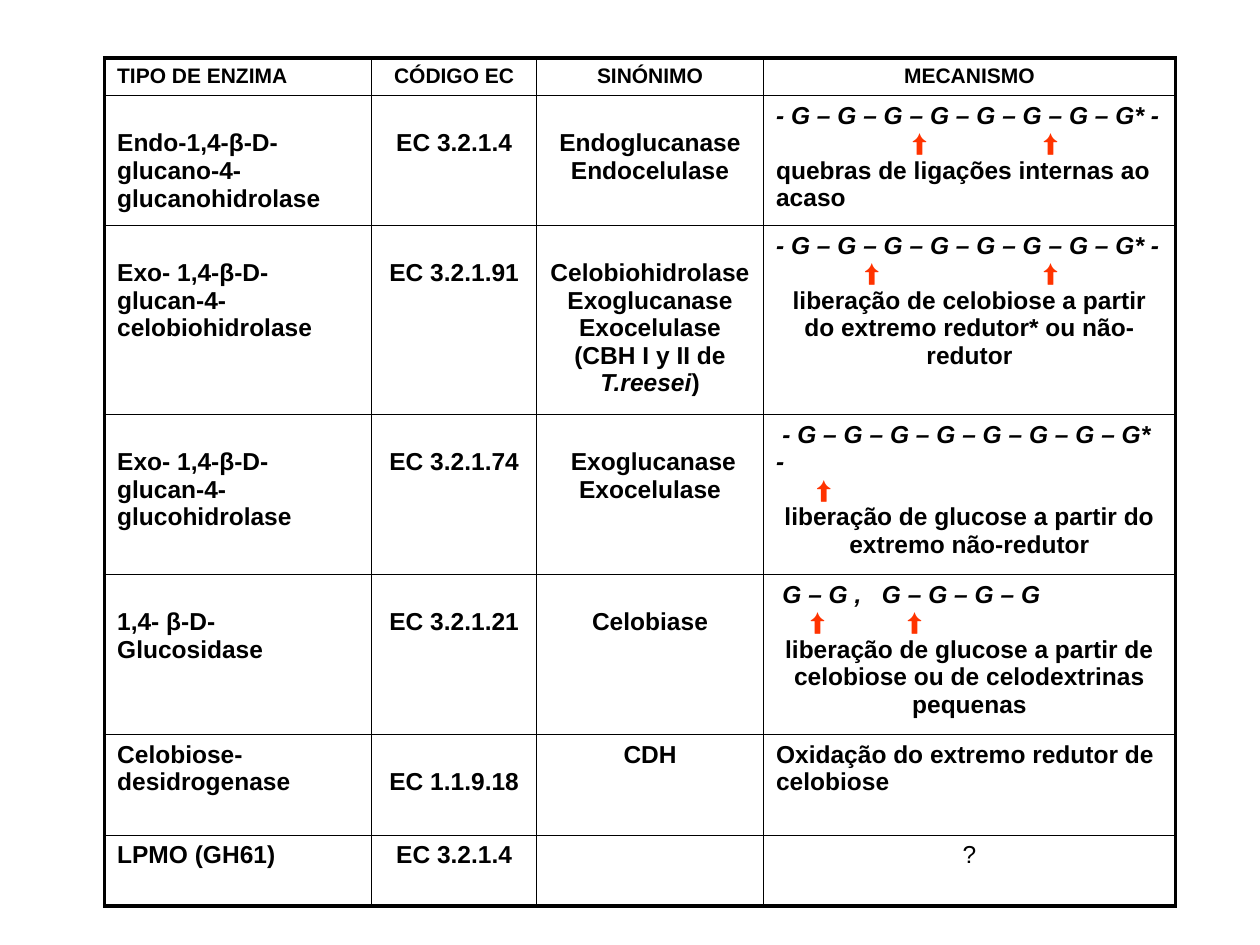
"""Build a slide with a table of cellulolytic enzymes and their mechanisms."""
from lxml import etree
from pptx import Presentation
from pptx.dml.color import RGBColor
from pptx.enum import text as txt
from pptx.oxml import ns
from pptx.util import Inches, Pt

BLACK = RGBColor(0x00, 0x00, 0x00)
ORANGE = RGBColor(0xFF, 0x33, 0x00)
LEFT, CENTER = txt.PP_ALIGN.LEFT, txt.PP_ALIGN.CENTER
MARGIN, LINE = 0.05, 0.22
CHAIN = "- G – G – G – G – G – G – G – G* -"

COLUMNS = [2.12, 1.31, 1.8, 3.27]
HEIGHTS = [0.3, 1.03, 1.5, 1.27, 1.27, 0.8, 0.56]
HEADERS = ["TIPO DE ENZIMA", "CÓDIGO EC", "SINÓNIMO", "MECANISMO"]
ENZYMES = [
    ("Endo-1,4-β-D-glucano-4-glucanohidrolase", "EC 3.2.1.4",
     ["Endoglucanase", "Endocelulase"]),
    ("Exo- 1,4-β-D-glucan-4-celobiohidrolase", "EC 3.2.1.91",
     ["Celobiohidrolase", "Exoglucanase", "Exocelulase", "(CBH I y II de |T.reesei|)"]),
    ("Exo- 1,4-β-D-glucan-4-glucohidrolase", "EC 3.2.1.74",
     [" Exoglucanase", "Exocelulase"]),
    ("1,4- β-D-Glucosidase", "EC 3.2.1.21", ["Celobiase"]),
    ("Celobiose-desidrogenase", "EC 1.1.9.18", ["CDH"]),
    ("LPMO (GH61)", "EC 3.2.1.4", []),
]
MECHANISMS = [
    (CHAIN, [], [1.08, 2.12], "quebras de ligações internas ao acaso", LEFT),
    (CHAIN, [], [0.7, 2.12],
     "liberação de celobiose a partir do extremo redutor* ou não-redutor", CENTER),
    ("\t" + CHAIN, [0.05], [0.32],
     "liberação de glucose a partir do extremo não-redutor", CENTER),
    ("\tG – G ,\tG – G – G – G", [0.05, 0.84], [0.27, 1.04],
     "liberação de glucose a partir de celobiose ou de celodextrinas pequenas", CENTER),
]
DROPPED = {(row, column) for row in range(1, 5) for column in range(3)} | {(5, 1)}


def write(cell, text, size=14, bold=True, italic=False, color=BLACK, align=LEFT, tabs=()):
    frame = cell.text_frame
    para = frame.add_paragraph() if frame.text else frame.paragraphs[0]
    para.alignment = align
    if tabs:
        stops = etree.SubElement(para._p.get_or_add_pPr(), ns.qn("a:tabLst"))
        for tab in tabs:
            etree.SubElement(stops, ns.qn("a:tab"), pos=str(Inches(tab)), algn="l")
    for index, part in enumerate(text.split("|")):
        span = para.add_run()
        span.text = part
        span.font.name = "Arial"
        span.font.size = Pt(size)
        span.font.bold = bold
        span.font.italic = italic or index % 2 == 1
        span.font.color.rgb = color


def add_border(cell, side, width):
    line = etree.SubElement(cell._tc.get_or_add_tcPr(), ns.qn("a:ln" + side), w=str(Pt(width)))
    fill = etree.SubElement(line, ns.qn("a:solidFill"))
    etree.SubElement(fill, ns.qn("a:srgbClr"), val=str(BLACK))


deck = Presentation()
deck.slide_width, deck.slide_height = Inches(10), Inches(7.5)
page = deck.slides.add_slide(deck.slide_layouts[6])
table = page.shapes.add_table(
    len(HEIGHTS), len(COLUMNS), Inches(0.83), Inches(0.46),
    Inches(sum(COLUMNS)), Inches(sum(HEIGHTS))).table
table.first_row = table.horz_banding = False
for column, width in zip(table.columns, COLUMNS):
    column.width = Inches(width)
for row, height in zip(table.rows, HEIGHTS):
    row.height = Inches(height)

last_row, last_column = len(HEIGHTS) - 1, len(COLUMNS) - 1
for r in range(len(HEIGHTS)):
    for c in range(len(COLUMNS)):
        cell = table.cell(r, c)
        edges = {"L": c == 0, "R": c == last_column, "T": r == 0, "B": r == last_row}
        for side, outer in edges.items():
            add_border(cell, side, 2.25 if outer else 1)
        cell.fill.background()
        cell.margin_left = cell.margin_right = Inches(0.1)
        cell.margin_top = Inches(MARGIN + LINE * ((r, c) in DROPPED))
        cell.margin_bottom = Inches(MARGIN)

for c, header in enumerate(HEADERS):
    write(table.cell(0, c), header, size=12, align=CENTER if c else LEFT)

for r, (enzyme, code, synonyms) in enumerate(ENZYMES, start=1):
    write(table.cell(r, 0), enzyme)
    write(table.cell(r, 1), code, align=CENTER)
    for synonym in synonyms:
        write(table.cell(r, 2), synonym, align=CENTER)

for r, (chain, chain_tabs, cuts, result, align) in enumerate(MECHANISMS, start=1):
    cell = table.cell(r, 3)
    write(cell, chain, italic=True, tabs=chain_tabs)
    write(cell, "\t⬆" * len(cuts), color=ORANGE, tabs=cuts)
    write(cell, result, align=align)
write(table.cell(5, 3), "Oxidação do extremo redutor de celobiose")
write(table.cell(6, 3), "?", bold=False, align=CENTER)

deck.save("out.pptx")
